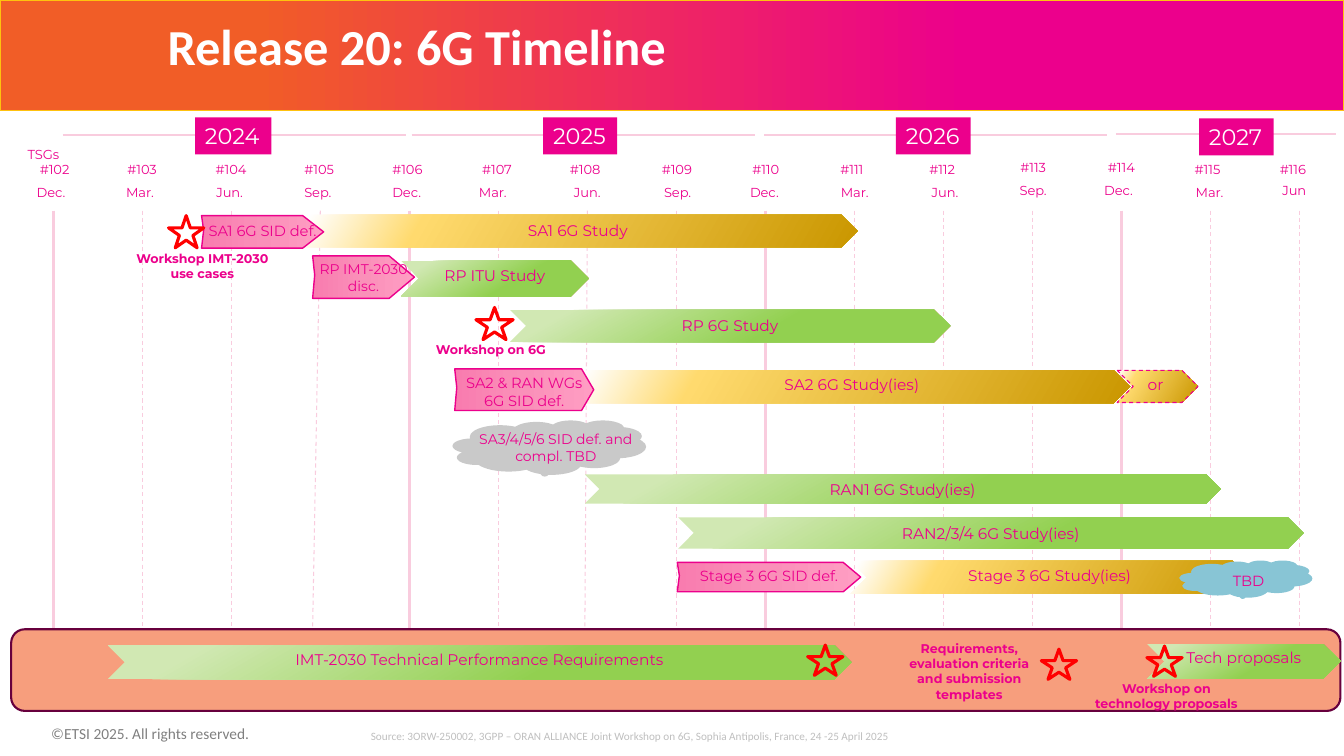
from lxml import etree
from pptx import Presentation
from pptx.dml.color import RGBColor
from pptx.enum.dml import MSO_LINE
from pptx.enum.shapes import MSO_CONNECTOR, MSO_SHAPE
from pptx.enum.text import MSO_ANCHOR, PP_ALIGN
from pptx.oxml.ns import qn
from pptx.util import Pt

COLORS = {
    "magenta": "EC008C", "yellow": "FFC20E", "rose": "F9CCDE", "salmon": "F79E7D",
    "plum": "67003D", "white": "FFFFFF", "red": "FF0000", "cloud_gray": "C9C9C9",
    "cloud_blue": "88C5D5", "gray": "808080", "silver": "BFBFBF",
}
GRADIENTS = {
    "header": (180, [(28, "EC008C"), (81, "F15D27")]),
    "gold": (30, [(2, "FFFFFF"), (22, "FFDA6E"), (100, "CA9700")]),
    "green": (60, [(12, "D1E8B3"), (60, "92D050"), (100, "92D050")]),
    "pink": (180, [(0, "FF9DC3"), (50, "FA90B9"), (100, "F97CAF")]),
}


def style(sp, fill=None, line=None, width=1):
    sp.shadow.inherit = False
    if fill in GRADIENTS:
        angle, stops = GRADIENTS[fill]
        sp.fill.gradient()
        sp.fill.gradient_angle = 360 - angle
        gs_list = sp.element.find(".//" + qn("a:gsLst"))
        for gs in list(gs_list):
            gs_list.remove(gs)
        for pos, color in stops:
            gs = etree.SubElement(gs_list, qn("a:gs"), pos=str(pos * 1000))
            etree.SubElement(gs, qn("a:srgbClr"), val=color)
    elif fill:
        sp.fill.solid()
        sp.fill.fore_color.rgb = RGBColor.from_string(COLORS[fill])
    else:
        sp.fill.background()
    if line:
        sp.line.color.rgb = RGBColor.from_string(COLORS[line])
        sp.line.width = Pt(width)
    else:
        sp.line.fill.background()


def write(sp, text, size, color="magenta", font="Montserrat", bold=False,
          align=PP_ALIGN.CENTER, anchor=MSO_ANCHOR.MIDDLE, wrap=True, inset=7.2, lift=0):
    tf = sp.text_frame
    tf.word_wrap = wrap
    tf.vertical_anchor = anchor
    tf.margin_left = tf.margin_right = Pt(inset)
    tf.margin_top, tf.margin_bottom = Pt(3.6 - lift), Pt(3.6 + lift)
    p = tf.paragraphs[0]
    p.alignment = align
    r = p.add_run()
    r.text = text
    r.font.size = Pt(size)
    r.font.name = font
    r.font.bold = bold
    r.font.color.rgb = RGBColor.from_string(COLORS[color])


prs = Presentation()
prs.slide_width = Pt(960)
prs.slide_height = Pt(540)
s = prs.slides.add_slide(prs.slide_layouts[5])

header = s.shapes.add_shape(MSO_SHAPE.RECTANGLE, Pt(0), Pt(0), Pt(960), Pt(79))
style(header, "header", "yellow", 0)

title = s.shapes.title
title.element.getparent().append(title.element)
title.left, title.top, title.width, title.height = Pt(111), Pt(12.5), Pt(526), Pt(45)
write(title, "Release 20: 6G Timeline", 36, "white", "Calibri", True, PP_ALIGN.LEFT, inset=8.64)
title.text_frame.paragraphs[0].line_spacing = 0.9

lean = {3: -6, 6: -2}
lines = []
for i in range(15):
    x = 38 + 63.6 * i
    lines.append((x, 150.5, x + lean.get(i, 0), 477.5, 0.75 if i % 4 else 2.25))
for x1, x2, y in [(45, 290, 96.5), (294, 539, 96.5), (546, 791, 96.5), (797, 954, 95.8)]:
    lines.append((x1, y, x2, y, 1))
for x1, y1, x2, y2, width in lines:
    cn = s.shapes.add_connector(MSO_CONNECTOR.STRAIGHT, Pt(x1), Pt(y1), Pt(x2), Pt(y2))
    cn.line.color.rgb = RGBColor.from_string(COLORS["rose"])
    cn.line.width = Pt(width)
    if width == 0.75:
        cn.line.dash_style = MSO_LINE.DASH
    etree.SubElement(cn.element.spPr, qn("a:effectLst"))

panel = s.shapes.add_shape(MSO_SHAPE.ROUNDED_RECTANGLE, Pt(8), Pt(449.5), Pt(949.5), Pt(58.3))
style(panel, "salmon", "plum", 1.5)

for year, x, y, w in [("2024", 139.3, 83.8, 54.5), ("2025", 388, 83.8, 52.8),
                      ("2026", 640, 83.8, 53.3), ("2027", 856.5, 84.5, 53.3)]:
    sp = s.shapes.add_shape(MSO_SHAPE.RECTANGLE, Pt(x), Pt(y), Pt(w), Pt(26.6))
    style(sp, "magenta")
    write(sp, year, 16, "white", align=PP_ALIGN.LEFT, wrap=False)

meetings = [
    (39, 36.5, 0), (101.5, 100, 0), (165, 164, 0), (228, 227, 0), (291, 290.5, 0),
    (355, 352, 0), (418, 419.5, 0), (483.5, 484, 0), (547, 546, 0), (608.5, 610.5, 0),
    (673, 675, 0), (738, 738, -1.2), (801, 799, -1.2), (862.5, 864, 0), (923.5, 924.5, 0),
]
months = ["Dec.", "Mar.", "Jun.", "Sep."]
labels = [("TSGs", 31, 101)]
for i, (number_x, month_x, shift) in enumerate(meetings):
    last = i == len(meetings) - 1
    labels.append((f"#{102 + i}", number_x, 111.6 + shift))
    labels.append(("Jun" if last else months[i % 4], month_x, 126.7 if last else 128.2 + shift))
for text, center, y in labels:
    sp = s.shapes.add_textbox(Pt(center - 20), Pt(y), Pt(40), Pt(18.7))
    write(sp, text, 9.3, anchor=MSO_ANCHOR.TOP, wrap=False)

studies = [
    ("SA1 6G Study", "gold", 213, 153.5, 399.5, 23, 0.7),
    ("RP ITU Study", "green", 286.5, 186.2, 134, 25.5, 2.1),
    ("RP 6G Study", "green", 364.2, 221.3, 314.5, 23, 0.7),
    ("RAN1 6G Study(ies)", "green", 417.6, 338.8, 454.3, 21, 0),
    ("SA2 6G Study(ies)", "gold", 409.7, 264.6, 397.5, 23.3, 1.4),
    ("Stage 3 6G Study(ies)", "gold", 607.6, 400.7, 284.4, 23.3, 1.4),
    ("RAN2/3/4 6G Study(ies)", "green", 484.5, 369.5, 446.5, 22.3, 0),
    ("or", "gold", 798, 264.5, 57.7, 23, 1.4),
    ("Tech proposals", "green", 819.4, 460, 138.2, 24.8, 2.8),
    ("IMT-2030 Technical Performance Requirements", "green", 76.8, 460.8, 531.4, 24.5, 2.1),
]
for text, fill, x, y, w, h, lift in studies:
    sp = s.shapes.add_shape(MSO_SHAPE.CHEVRON, Pt(x), Pt(y), Pt(w), Pt(h))
    style(sp, fill, "magenta" if text == "or" else None, 0.75)
    if text == "or":
        sp.line.dash_style = MSO_LINE.DASH
    write(sp, text, 11, inset=0, lift=lift)
    if text == "or":
        sp.text_frame.margin_right = Pt(2.8)

definitions = [
    ("Stage 3 6G SID def.", 10.5, 483.8, 401.7, 131, 21, 12.5, 0.7),
    ("SA1 6G SID def.", 10.5, 144, 154, 87.2, 23.3, 15, 1),
    ("RP IMT-2030 disc.", 10, 223.3, 182.8, 72.7, 30.3, 18, 0),
    ("SA2 & RAN WGs 6G SID def.", 10.5, 324.8, 263.5, 99.3, 29.7, 8.7, -1.4),
]
for text, size, x, y, w, h, tip, lift in definitions:
    fb = s.shapes.build_freeform(Pt(x), Pt(y), 1.0)
    fb.add_line_segments([
        (Pt(x + w - tip), Pt(y)), (Pt(x + w), Pt(y + h / 2)), (Pt(x + w - tip), Pt(y + h)),
        (Pt(x), Pt(y + h)), (Pt(x + 1.5), Pt(y + h * 0.45)),
    ], close=True)
    sp = fb.convert_to_shape()
    style(sp, "pink", "magenta", 1)
    write(sp, text, size, inset=0, lift=lift)

for fill, x, y, w, h in [("cloud_gray", 323.3, 300.2, 138.2, 38.9),
                         ("cloud_blue", 842.4, 400.3, 95, 26.6)]:
    sp = s.shapes.add_shape(MSO_SHAPE.CLOUD_CALLOUT, Pt(x), Pt(y), Pt(w), Pt(h))
    sp.adjustments[0] = -0.016
    sp.adjustments[1] = 0.305
    style(sp, fill)

for x, y, w, h in [(120.4, 154, 25.2, 23), (340, 219.6, 26.6, 23), (743.8, 463.7, 25.2, 21.6),
                   (576.9, 460.8, 25.2, 21.6), (819.2, 461.5, 25.2, 21.6)]:
    sp = s.shapes.add_shape(MSO_SHAPE.STAR_5_POINT, Pt(x), Pt(y), Pt(w), Pt(h))
    style(sp, None, "red", 2.25)

notes = [
    ("Workshop on 6G", 9, True, PP_ALIGN.LEFT, 304.3, 240.5, 113, 18.7),
    ("Workshop IMT-2030 use cases", 9, True, PP_ALIGN.CENTER, 84, 175.7, 121, 29.5),
    ("SA3/4/5/6 SID def. and compl. TBD", 10, False, PP_ALIGN.CENTER, 334, 303.8, 126, 31.7),
    ("TBD", 10.5, False, PP_ALIGN.CENTER, 836, 404.6, 111.6, 20.2),
    ("Requirements, evaluation criteria and submission templates", 9, True, PP_ALIGN.CENTER,
     641.2, 454.3, 102.2, 51),
    ("Workshop on technology proposals", 9, True, PP_ALIGN.CENTER, 773.4, 482.6, 119.5, 28.8),
]
for text, size, bold, align, x, y, w, h in notes:
    sp = s.shapes.add_textbox(Pt(x), Pt(y), Pt(w), Pt(h))
    write(sp, text, size, bold=bold, align=align, anchor=MSO_ANCHOR.TOP)

footers = [
    ("©ETSI 2025. All rights reserved.", 11, "gray", 29.5, 513.4, 173.5, 20.9),
    ("Source: 3ORW-250002, 3GPP – ORAN ALLIANCE Joint Workshop on 6G, Sophia Antipolis, "
     "France, 24 -25 April 2025", 8, "silver", 257.8, 517, 399, 17.3),
]
for text, size, color, x, y, w, h in footers:
    sp = s.shapes.add_textbox(Pt(x), Pt(y), Pt(w), Pt(h))
    write(sp, text, size, color, "Calibri", align=PP_ALIGN.LEFT)

prs.save("out.pptx")
